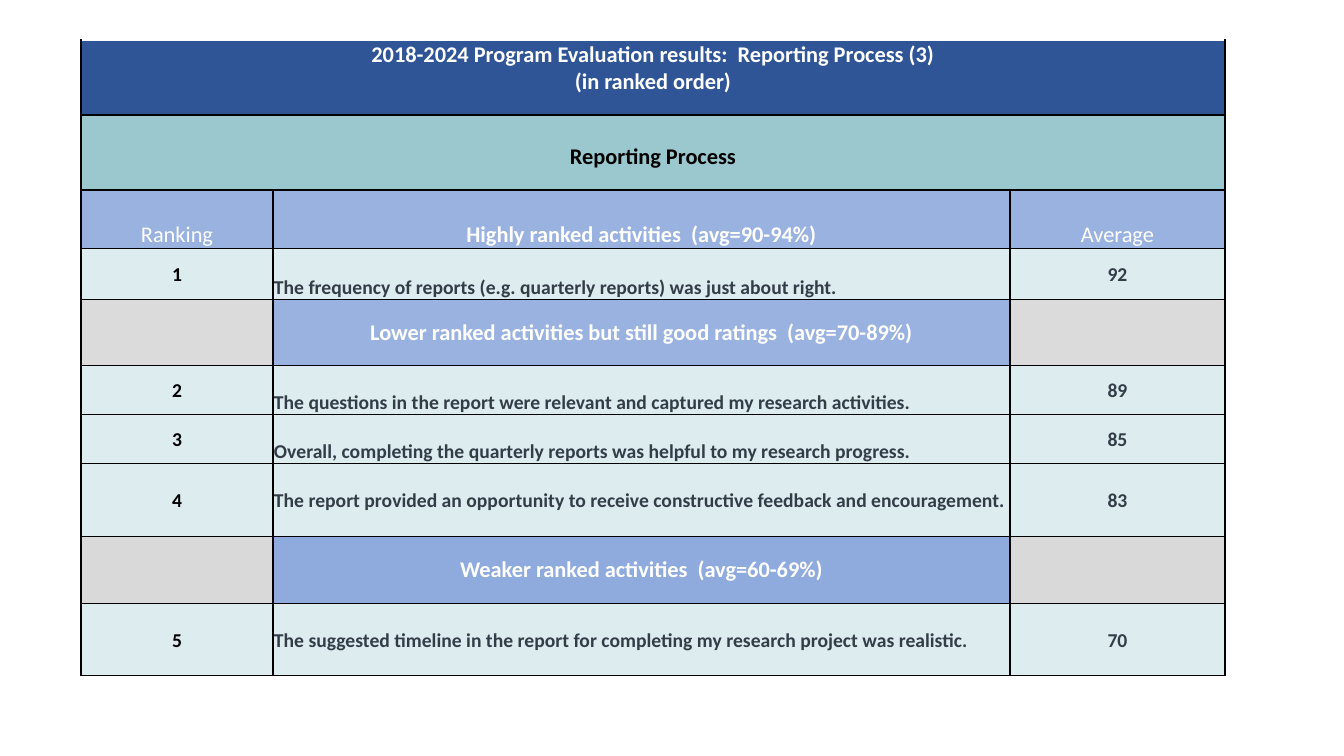
from dataclasses import dataclass

from lxml import etree
from pptx import Presentation
from pptx import util as u
from pptx.dml.color import RGBColor
from pptx.enum import text
from pptx.oxml.ns import qn


@dataclass(frozen=True)
class Theme:
    """Colours, font and type sizes of the slide."""
    font: str = "Calibri"
    head_size: int = 16
    body_size: int = 14
    title: str = "2F5597"
    section: str = "9BC7CE"
    band: str = "8FAADC"
    body: str = "DDECEE"
    blank: str = "A6A6A6"
    solid_blank: str = "D9D9D9"
    white: str = "FFFFFF"
    black: str = "000000"
    ink: str = "333D48"


T = Theme()
TOP, MIDDLE, BOTTOM = (text.MSO_ANCHOR.TOP, text.MSO_ANCHOR.MIDDLE,
                       text.MSO_ANCHOR.BOTTOM)
COLS = [192, 737, 215]
BANNER_GAP = 19
ROWS = [
    ("title", 75, BOTTOM, ["2018-2024 Program Evaluation results:  Reporting Process (3)\n(in ranked order)", "", ""]),
    ("section", 75, BOTTOM, ["Reporting Process", "", ""]),
    ("head", 59, BOTTOM, ["Ranking", "Highly ranked activities  (avg=90-94%)", "Average"]),
    ("item", 51, BOTTOM, ["1", "The frequency of reports (e.g. quarterly reports) was just about right.", "92"]),
    ("band", 66, MIDDLE, ["", "Lower ranked activities but still good ratings  (avg=70-89%)", ""]),
    ("item", 49, BOTTOM, ["2", "The questions in the report were relevant and captured my research activities.", "89"]),
    ("item", 49, BOTTOM, ["3", "Overall, completing the quarterly reports was helpful to my research progress.", "85"]),
    ("item", 73, MIDDLE, ["4", "The report provided an opportunity to receive constructive feedback and encouragement.", "83"]),
    ("solid band", 67, MIDDLE, ["", "Weaker ranked activities  (avg=60-69%)", ""]),
    ("item", 72, MIDDLE, ["5", "The suggested timeline in the report for completing my research project was realistic.", "70"]),
]


def px(n):
    """Turn pixels into EMU."""
    return u.Inches(n / 100.8)


def set_borders(cell, top):
    """Draw one-point lines on all four sides of a cell."""
    tcPr = cell._tc.get_or_add_tcPr()
    for side, color in (("L", T.black), ("R", T.black), ("T", top), ("B", T.black)):
        ln = etree.SubElement(tcPr, qn("a:ln" + side), w=str(u.Pt(1)))
        fill = etree.SubElement(ln, qn("a:solidFill"))
        etree.SubElement(fill, qn("a:srgbClr"), val=color)


def set_fill(cell, color, opacity=100):
    """Fill a cell with a colour at a given opacity in percent."""
    cell.fill.solid()
    cell.fill.fore_color.rgb = RGBColor.from_string(color)
    if opacity < 100:
        clr = cell._tc.tcPr.find(qn("a:solidFill"))[0]
        etree.SubElement(clr, qn("a:alpha"), val=str(opacity * 1000))


def set_text(cell, words, size, color, bold, align):
    """Write and format the words of a cell."""
    tf = cell.text_frame
    tf.text = words
    for p in tf.paragraphs:
        p.alignment = align
        p.font.size = u.Pt(size)
        for r in p.runs:
            r.font.name = T.font
            r.font.size = u.Pt(size)
            r.font.bold = bold
            r.font.color.rgb = RGBColor.from_string(color)


def cell_fill(kind, col):
    """Give the colour and opacity of a cell from its row kind and column."""
    if kind == "band" and col != 1:
        return T.blank, 40
    if kind == "solid band":
        return (T.band if col == 1 else T.solid_blank), 100
    return {"title": (T.title, 100), "section": (T.section, 100),
            "item": (T.body, 100)}.get(kind, (T.band, 90))


def style_cell(cell, kind, col, anchor, words):
    """Format one cell by its row kind and column."""
    item, banner = kind == "item", kind in ("title", "section")
    set_borders(cell, T.white if kind == "title" else T.black)
    set_fill(cell, *cell_fill(kind, col))
    cell.margin_left = cell.margin_right = cell.margin_top = px(1 if item else 0)
    cell.margin_bottom = px(BANNER_GAP if banner else 0)
    cell.vertical_anchor = MIDDLE if item and col != 1 else anchor
    if item:
        color = T.black if col == 0 else T.ink
    else:
        color = T.black if kind == "section" else T.white
    align = text.PP_ALIGN.LEFT if item and col == 1 else text.PP_ALIGN.CENTER
    set_text(cell, words, T.body_size if item else T.head_size, color,
             kind != "head" or col == 1, align)


def add_ranking_table(s, x, y):
    """Place the ranking table with its top left corner at x, y."""
    height = sum(row[1] for row in ROWS)
    table = s.shapes.add_table(len(ROWS), len(COLS), px(x), px(y),
                               px(sum(COLS)), px(height)).table
    table.first_row = table.horz_banding = False
    for column, width in zip(table.columns, COLS):
        column.width = px(width)
    for i, (kind, row_height, anchor, words) in enumerate(ROWS):
        table.rows[i].height = px(row_height)
        for col, word in enumerate(words):
            style_cell(table.cell(i, col), kind, col, anchor, word)
        if kind in ("title", "section"):
            table.cell(i, 0).merge(table.cell(i, len(COLS) - 1))


def main():
    """Build and save the slide."""
    prs = Presentation()
    prs.slide_width, prs.slide_height = px(1344), px(756)
    s = prs.slides.add_slide(prs.slide_layouts[6])
    add_ranking_table(s, 81, 40)
    prs.save("out.pptx")


if __name__ == "__main__":
    main()
